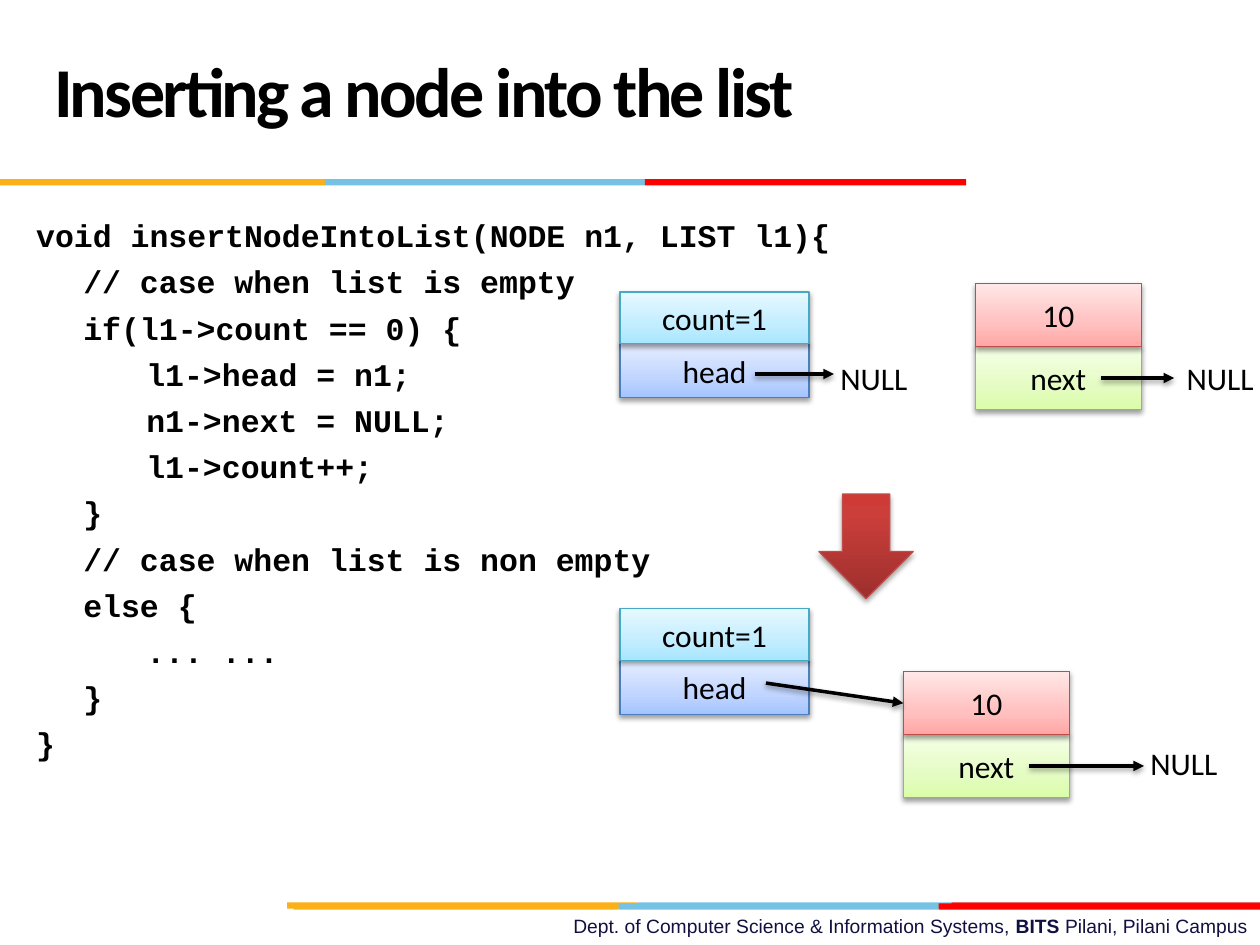
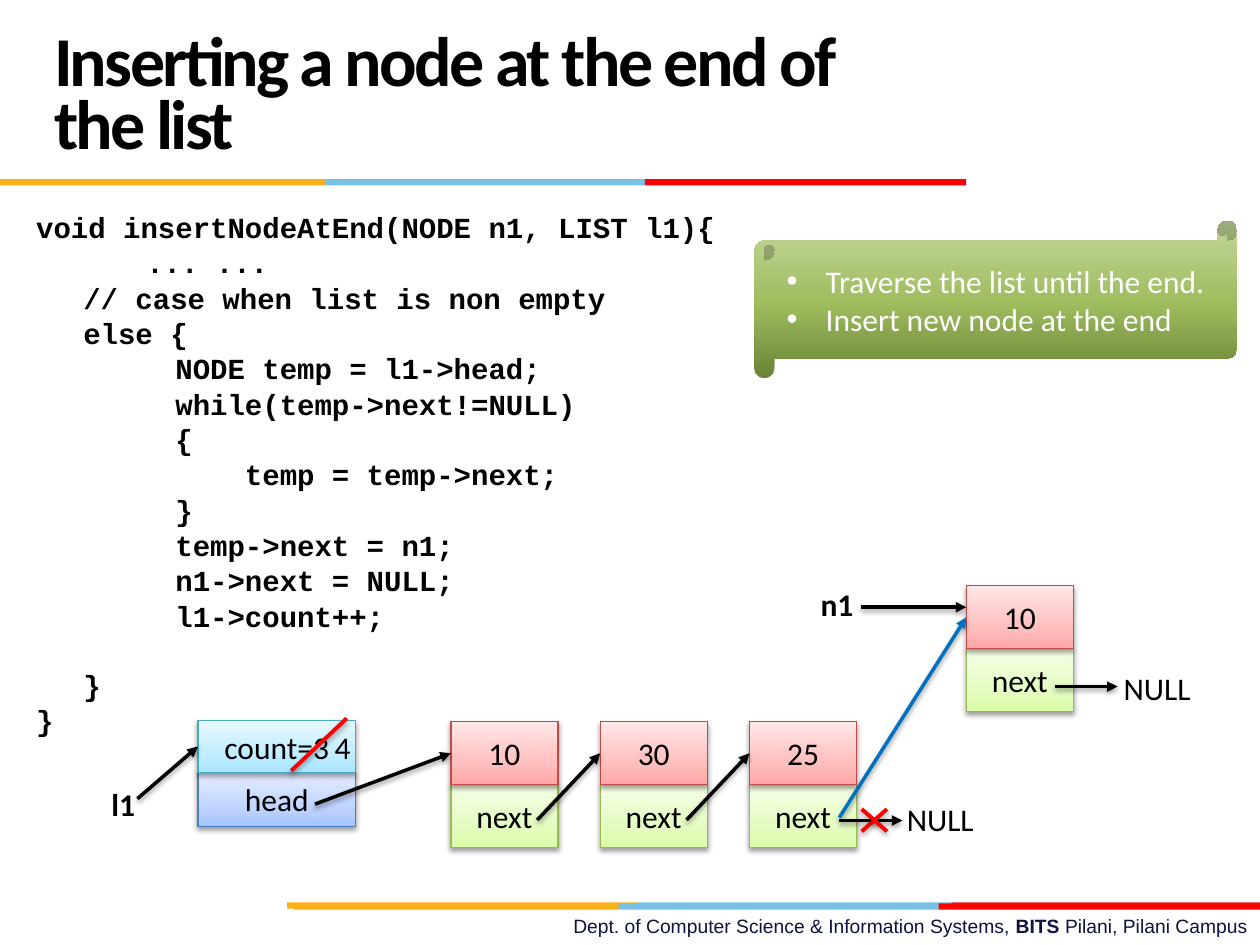
"""Build two slides on inserting nodes into a linked list."""
from copy import deepcopy

from lxml import etree
from pptx import Presentation
from pptx.dml.color import RGBColor
from pptx.enum import shapes, text
from pptx.oxml.ns import qn
from pptx.util import Cm, Pt

BLACK, WHITE = RGBColor(0, 0, 0), RGBColor(255, 255, 255)
AMBER, SKY = RGBColor(0xFC, 0xB0, 0x17), RGBColor(0x76, 0xC2, 0xE5)
RED, CRIMSON = RGBColor(0xFF, 0, 0), RGBColor(0xE3, 0x1C, 0x24)
BLUE, NAVY = RGBColor(0, 0x70, 0xC0), RGBColor(0x10, 0x11, 0x41)
PINK_EDGE, GREEN_EDGE = RGBColor(0xBF, 0x4C, 0x48), RGBColor(0x98, 0xB9, 0x55)
BLUE_EDGE, AQUA_EDGE = RGBColor(0x4B, 0x7E, 0xBC), RGBColor(0x46, 0xAA, 0xC5)


def stops(middle, *colours):
    return tuple(zip((0, middle, 1), map(RGBColor.from_string, colours)))


PINK = stops(0.35, "FFA6A5", "FFC0BF", "FFE7E7")
GREEN = stops(0.35, "DAFDA7", "E4FCC2", "F5FFE7")
PERIWINKLE = stops(0.35, "A4C4FF", "BFD4FF", "E6EEFF")
AQUA = stops(0.35, "A7E6FF", "C1EDFF", "E7F8FF")
BRICK = stops(0.8, "9C2F2D", "CB3E3A", "CE3B37")
OLIVE = stops(0.48, "6A8336", "9EBD5E", "C3D69B")

BANDS = [
    (18.19, (5.79, 12.85, 19.18, 25.4), (AMBER, SKY, CRIMSON)),
    (18.21, (5.92, 12.47, 18.92, 25.4), (AMBER, SKY, RED)),
    (3.61, (0, 6.55, 13, 19.48), (AMBER, SKY, RED)),
]
FOOTER = [("Dept. of Computer Science & Information Systems, ", False),
          ("BITS ", True), ("Pilani, Pilani Campus", False)]
CELL_H, COUNT_H, HEAD_H = 1.27, 1.04, 1.09
CHAIN_X, CHAIN_STEP, CHAIN_Y, NEXT_DX, NEXT_Y = 9.09, 3.01, 14.55, 1.74, 16.53
CHAIN = ["10", "30", "25"]
TIPS = ["Traverse the list until the end.", "Insert new node at the end"]

EMPTY_CASE = {
    "title": "Inserting a node into the list",
    "code": [
        "void insertNodeIntoList(NODE n1, LIST l1){",
        "\t// case when list is empty",
        "\tif(l1->count == 0) {",
        "\t\tl1->head = n1;",
        "\t\tn1->next = NULL;",
        "\t\tl1->count++;",
        "\t}",
        "\t// case when list is non empty",
        "\telse {",
        "\t\t... ...",
        "\t}",
        "}",
    ],
    "code_style": {"height": 12.83, "size": 18, "spacing": 1, "before": 4.8},
    "headers": {"before": (12.5, 5.89, 3.81, "count=1"),
                "after": (12.5, 12.27, 3.81, "count=1")},
    "nodes": {"new": (19.66, 5.72, 3.35, "10"),
              "linked": (18.21, 13.54, 3.35, "10")},
    "labels": [("NULL", 22.94, 14.88, 1.96), ("NULL", 23.67, 7.11, 1.96),
               ("NULL", 16.69, 7.11, 1.96)],
    "arrows": [((15.44, 13.77), "linked", BLACK),
               ((20.75, 15.44), (23.06, 15.44), BLACK),
               ((15.21, 7.54), (16.81, 7.54), BLACK),
               ((22.2, 7.62), (23.67, 7.62), BLACK)],
    "strikes": [],
}

END_CASE = {
    "title": "Inserting a node at the end of the list",
    "code": [
        "void insertNodeAtEnd(NODE n1, LIST l1){",
        "\t\t... ...",
        "\t// case when list is non empty",
        "\telse {",
        "        NODE temp = l1->head;",
        "        while(temp->next!=NULL)",
        "        {",
        "            temp = temp->next;",
        "        }",
        "        temp->next = n1;",
        "        n1->next = NULL;",
        "        l1->count++;",
        "\t}",
        "}",
    ],
    "code_style": {"height": 11.99, "size": 16.6, "spacing": 0.8,
                   "before": 4.25, "gaps": {12: 23.6}},
    "headers": {"l1": (3.99, 14.53, 3.18, "count=3")},
    "nodes": {
        **{value: (CHAIN_X + i * CHAIN_STEP, CHAIN_Y, 2.16, value)
           for i, value in enumerate(CHAIN)},
        "n1": (19.48, 11.81, 2.16, "10"),
    },
    "labels": [("NULL", 18.03, 16, 1.96), ("NULL", 22.4, 13.36, 1.96),
               ("l1", 0.81, 15.7, 3.35), ("4", 6.25, 14.55, 1.32),
               ("n1", 15.95, 11.66, 1.85)],
    "arrows": [
        *[((CHAIN_X + i * CHAIN_STEP + NEXT_DX, NEXT_Y), value, BLACK)
          for i, value in enumerate(CHAIN[1:])],
        ((16.92, 16.54), (18.19, 16.54), BLACK),
        ((6.35, 16.21), "10", BLACK),
        ((21.26, 13.84), (22.53, 13.84), BLACK),
        ((16.92, 16.48), "n1", BLUE),
        ((2.77, 16.1), "l1", BLACK),
        ((17.35, 12.24), (19.48, 12.24), BLACK),
    ],
    "strikes": [((17.88, 16.31), (17.37, 16.76)),
                ((17.88, 16.76), (17.37, 16.31)),
                ((6.99, 14.48), (5.87, 15.54))],
}


def style(font, size, name="Calibri", colour=BLACK, bold=False):
    font.size, font.name, font.bold = Pt(size), name, bold
    font.color.rgb = colour


def add_shadow(obj, opacity=38, distance=1.6):
    effects = etree.SubElement(obj._element.spPr, qn("a:effectLst"))
    shadow = etree.SubElement(effects, qn("a:outerShdw"), blurRad=str(Pt(3.1)),
                              dist=str(Pt(distance)), dir="5400000", rotWithShape="0")
    colour = etree.SubElement(shadow, qn("a:srgbClr"), val=str(BLACK))
    etree.SubElement(colour, qn("a:alpha"), val=str(opacity * 1000))


def add_text_box(s, x, y, w, h):
    tf = s.shapes.add_textbox(Cm(x), Cm(y), Cm(w), Cm(h)).text_frame
    tf.word_wrap = True
    return tf


def add_gradient_shape(s, kind, x, y, w, h, gradient, edge=None):
    sp = s.shapes.add_shape(kind, Cm(x), Cm(y), Cm(w), Cm(h))
    sp.fill.gradient()
    gs_list = sp._element.spPr.find(".//" + qn("a:gsLst"))
    gs_list.append(deepcopy(gs_list[-1]))
    for stop, (position, colour) in zip(sp.fill.gradient_stops, gradient):
        stop.position, stop.color.rgb = position, colour
    sp.fill.gradient_angle = 90
    if edge is None:
        sp.line.fill.background()
        sp.shadow.inherit = False
    else:
        sp.line.color.rgb, sp.line.width = edge, Pt(0.75)
    return sp


def add_cell(s, x, y, w, h, label, gradient, edge):
    sp = add_gradient_shape(s, shapes.MSO_SHAPE.RECTANGLE, x, y, w, h, gradient, edge)
    add_shadow(sp)
    tf = sp.text_frame
    tf.text = label
    tf.vertical_anchor = text.MSO_ANCHOR.MIDDLE
    p = tf.paragraphs[0]
    p.alignment = text.PP_ALIGN.CENTER
    style(p.runs[0].font, 18)
    return sp


def add_node(s, x, y, w, value):
    add_cell(s, x, y + CELL_H, w, CELL_H, "next", GREEN, GREEN_EDGE)
    return add_cell(s, x, y, w, CELL_H, value, PINK, PINK_EDGE)


def add_header(s, x, y, w, count):
    add_cell(s, x, y + COUNT_H, w, HEAD_H, "head", PERIWINKLE, BLUE_EDGE)
    return add_cell(s, x, y, w, COUNT_H, count, AQUA, AQUA_EDGE)


def add_line(s, start, end, colour, width):
    line = s.shapes.add_connector(shapes.MSO_CONNECTOR.STRAIGHT,
                                  *map(Cm, start), *map(Cm, end))
    line.line.color.rgb, line.line.width = colour, Pt(width)
    return line


def add_arrow(s, start, target, colour, cells):
    joined = isinstance(target, str)
    line = add_line(s, start, start if joined else target, colour, 2)
    if joined:
        line.end_connect(cells[target], 1)
    etree.SubElement(line.line._get_or_add_ln(), qn("a:tailEnd"), type="triangle")
    add_shadow(line)


def add_frame(s, title):
    for y, edges, colours in BANDS:
        for left, right, colour in zip(edges, edges[1:], colours):
            sp = s.shapes.add_shape(shapes.MSO_SHAPE.RECTANGLE, Cm(left), Cm(y),
                                    Cm(right - left), Cm(0.13))
            sp.fill.solid()
            sp.fill.fore_color.rgb = colour
            sp.line.fill.background()
            sp.shadow.inherit = False
    p = add_text_box(s, 0, 18.31, 25.4, 0.74).paragraphs[0]
    p.alignment = text.PP_ALIGN.RIGHT
    for words, bold in FOOTER:
        r = p.add_run()
        r.text = words
        style(r.font, 11, "Arial", NAVY, bold)
    tf = add_text_box(s, 0.84, 0.43, 17.58, 3.18)
    tf.text = title
    tf.vertical_anchor = text.MSO_ANCHOR.MIDDLE
    p = tf.paragraphs[0]
    p.line_spacing = Pt(36)
    style(p.runs[0].font, 40, bold=True)
    p.runs[0].font._element.set("spc", "-150")


def add_code(s, lines, height, size, spacing, before, gaps={}):
    tf = add_text_box(s, 0.48, 4.11, 24.49, height)
    tf.margin_top = Cm(0.25)
    tf.text = "\n".join(lines)
    for i, p in enumerate(tf.paragraphs):
        pPr = p._p.get_or_add_pPr()
        pPr.set("marL", str(Cm(0.95)))
        pPr.set("indent", str(-Cm(0.95)))
        p.line_spacing = spacing
        p.space_before = Pt(gaps.get(i, before) if i else 0)
        style(p.runs[0].font, size, "Courier New", bold=True)


def add_tips(s):
    sp = add_gradient_shape(s, shapes.MSO_SHAPE.HORIZONTAL_SCROLL,
                            15.21, 4.45, 9.73, 3.18, OLIVE)
    tf = sp.text_frame
    tf.text = "\n".join(TIPS)
    tf.vertical_anchor = text.MSO_ANCHOR.MIDDLE
    for p in tf.paragraphs:
        p.alignment = text.PP_ALIGN.LEFT
        pPr = p._p.get_or_add_pPr()
        pPr.set("marL", str(Cm(0.79)))
        pPr.set("indent", str(-Cm(0.79)))
        etree.SubElement(pPr, qn("a:buFont"), typeface="Arial")
        etree.SubElement(pPr, qn("a:buChar"), char="•")
        style(p.runs[0].font, 18, colour=WHITE)


def add_diagram(s, data):
    cells = {name: add_header(s, *spot) for name, spot in data["headers"].items()}
    cells.update({name: add_node(s, *spot) for name, spot in data["nodes"].items()})
    for label, x, y, w in data["labels"]:
        tf = add_text_box(s, x, y, w, 1.02)
        tf.text = label
        p = tf.paragraphs[0]
        if label != "NULL":
            p.alignment = text.PP_ALIGN.CENTER
        style(p.runs[0].font, 18, bold=label in ("l1", "n1"))
    for start, target, colour in data["arrows"]:
        add_arrow(s, start, target, colour, cells)
    for start, end in data["strikes"]:
        add_shadow(add_line(s, start, end, RED, 2.25), 35, 1.8)


def add_slide(prs, data):
    s = prs.slides.add_slide(prs.slide_layouts[6])
    add_frame(s, data["title"])
    add_code(s, data["code"], **data["code_style"])
    add_diagram(s, data)
    return s


def main():
    prs = Presentation()
    prs.slide_width, prs.slide_height = Cm(25.4), Cm(19.05)
    s = add_slide(prs, EMPTY_CASE)
    add_shadow(add_gradient_shape(s, shapes.MSO_SHAPE.DOWN_ARROW, 16.51, 9.96,
                                  1.9, 2.11, BRICK, PINK_EDGE), 35, 1.8)
    add_tips(add_slide(prs, END_CASE))
    prs.save("out.pptx")


if __name__ == "__main__":
    main()
